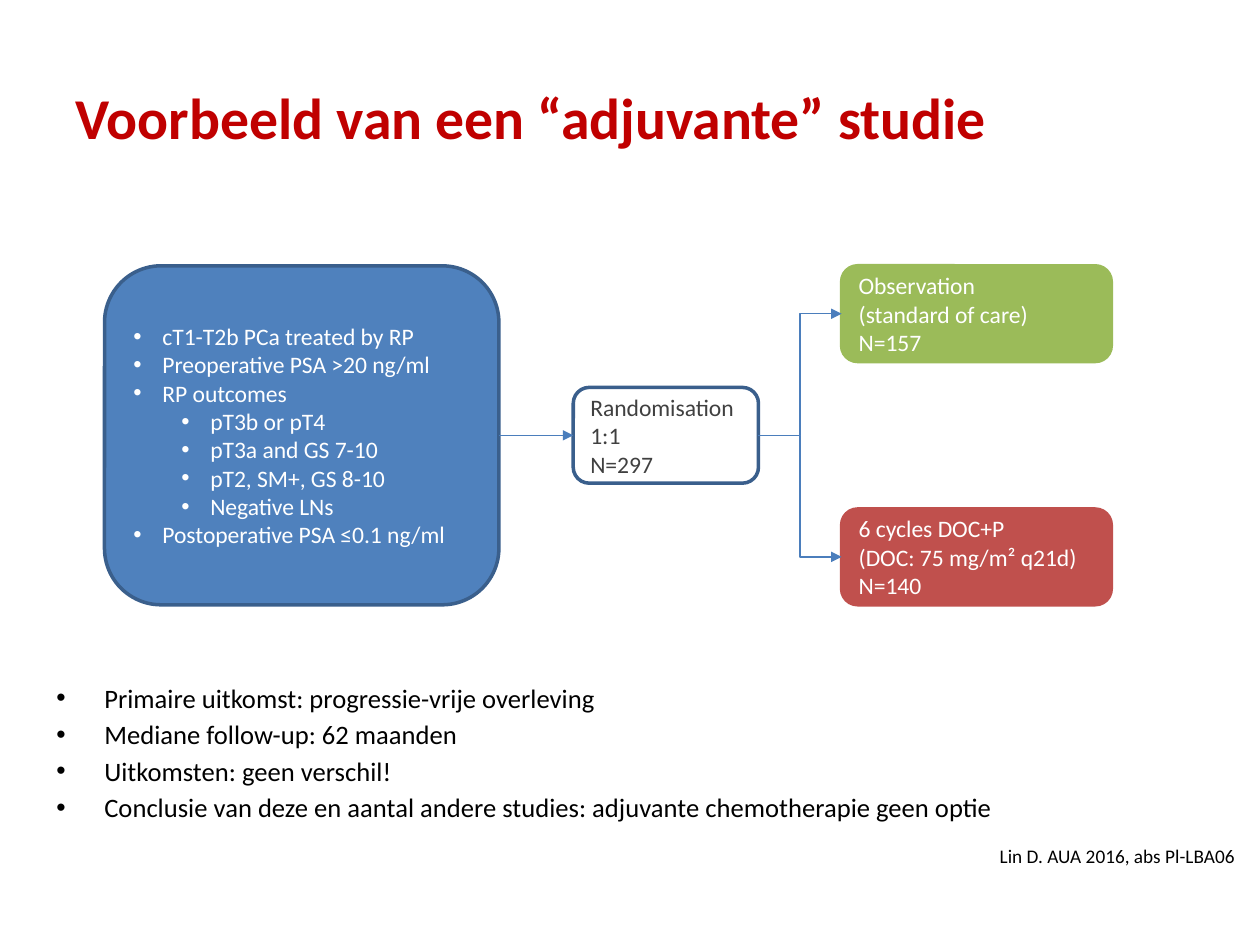
import pptx
import pptx.dml.color
import pptx.enum.dml
import pptx.enum.shapes
import pptx.enum.text
import pptx.oxml.ns
import pptx.util
from lxml import etree
from pptx.dml.color import RGBColor
from pptx.util import Inches

FONT = "Calibri"
TITLE_RED = RGBColor(0xC0, 0x00, 0x00)
BLACK = RGBColor(0x00, 0x00, 0x00)
WHITE = RGBColor(0xFF, 0xFF, 0xFF)
DARK_GREY = RGBColor(0x40, 0x40, 0x40)
BLUE = RGBColor(0x4F, 0x81, 0xBD)
BORDER_BLUE = RGBColor(0x3A, 0x5F, 0x8C)
ARROW_BLUE = RGBColor(0x4B, 0x7E, 0xBC)
GREEN = RGBColor(0x9B, 0xBB, 0x59)
RED = RGBColor(0xC0, 0x50, 0x4D)

CRITERIA = [
    ("cT1-T2b PCa treated by RP", 0),
    ("Preoperative PSA >20 ng/ml", 0),
    ("RP outcomes", 0),
    ("pT3b or pT4", 1),
    ("pT3a and GS 7-10", 1),
    ("pT2, SM+, GS 8-10", 1),
    ("Negative LNs", 1),
    ("Postoperative PSA ≤0.1 ng/ml", 0),
]
RANDOMISATION = ["Randomisation", "1:1", "N=297"]
OBSERVATION = ["Observation", "(standard of care)", "N=157"]
CHEMOTHERAPY = ["6 cycles DOC+P", "(DOC: 75 mg/m² q21d)", "N=140"]
FINDINGS = [
    "Primaire uitkomst: progressie-vrije overleving",
    "Mediane follow-up: 62 maanden",
    "Uitkomsten: geen verschil!",
    "Conclusie van deze en aantal andere studies: adjuvante chemotherapie geen optie",
]


def add_bullet(paragraph, left, hanging):
    properties = paragraph._p.get_or_add_pPr()
    properties.set("marL", str(left))
    properties.set("indent", str(-hanging))
    for tag, name, value in (("a:buFont", "typeface", "Arial"), ("a:buChar", "char", "•")):
        etree.SubElement(properties, pptx.oxml.ns.qn(tag)).set(name, value)


def write_lines(frame, lines, size, color, bold=False,
                align=pptx.enum.text.PP_ALIGN.LEFT):
    frame.word_wrap = True
    frame.text = "\n".join(lines)
    for paragraph in frame.paragraphs:
        paragraph.alignment = align
        for run in paragraph.runs:
            run.font.name = FONT
            run.font.size = pptx.util.Pt(size)
            run.font.bold = bold
            run.font.color.rgb = color


def add_text(slide, box, lines, size, color, **style):
    frame = slide.shapes.add_textbox(*box).text_frame
    write_lines(frame, lines, size, color, **style)
    return frame


def add_step(slide, box, lines, fill, border, color):
    step = slide.shapes.add_shape(
        pptx.enum.shapes.MSO_SHAPE.ROUNDED_RECTANGLE, *box)
    step.shadow.inherit = False
    if fill is None:
        step.fill.background()
    else:
        step.fill.solid()
        step.fill.fore_color.rgb = fill
    step.line.color.rgb = border
    step.line.width = pptx.util.Pt(2)
    step.text_frame.vertical_anchor = pptx.enum.text.MSO_ANCHOR.MIDDLE
    write_lines(step.text_frame, lines, 13.5, color)
    return step


def add_arrow(slide, source, target, kind):
    arrow = slide.shapes.add_connector(kind, 0, 0, 0, 0)
    arrow.begin_connect(source, 3)
    arrow.end_connect(target, 1)
    arrow.line.color.rgb = ARROW_BLUE
    arrow.line.width = pptx.util.Pt(0.75)
    line = arrow.line._get_or_add_ln()
    etree.SubElement(line, pptx.oxml.ns.qn("a:tailEnd")).set("type", "triangle")
    etree.SubElement(arrow._element.spPr, pptx.oxml.ns.qn("a:effectLst"))


def build_title(slide, box):
    frame = add_text(slide, box, ["Voorbeeld van een “adjuvante” studie"],
                     33, TITLE_RED, bold=True)
    frame.vertical_anchor = pptx.enum.text.MSO_ANCHOR.MIDDLE


def build_trial_flow(slide, box):
    left, top, width, height = box
    step_height = Inches(0.76)
    arm_width = Inches(2.14)
    arm_left = left + width - arm_width

    # Inclusion criteria
    criteria = add_step(slide, (left, top, Inches(3.13), height),
                        [text for text, level in CRITERIA], BLUE, BORDER_BLUE, WHITE)
    for paragraph, (text, level) in zip(criteria.text_frame.paragraphs, CRITERIA):
        paragraph.level = level
        add_bullet(paragraph, Inches(0.23 + 0.38 * level), Inches(0.23))

    # Randomisation, centred vertically
    randomisation = add_step(
        slide,
        (left + Inches(3.72), top + (height - step_height) // 2, Inches(1.47), step_height),
        RANDOMISATION, None, BORDER_BLUE, DARK_GREY)

    # Study arms, at the top and bottom of the flow
    observation = add_step(slide, (arm_left, top, arm_width, step_height),
                           OBSERVATION, GREEN, GREEN, WHITE)
    chemotherapy = add_step(
        slide, (arm_left, top + height - step_height, arm_width, step_height),
        CHEMOTHERAPY, RED, RED, WHITE)

    # Arrows
    connector = pptx.enum.shapes.MSO_CONNECTOR
    add_arrow(slide, criteria, randomisation, connector.STRAIGHT)
    for arm in (observation, chemotherapy):
        add_arrow(slide, randomisation, arm, connector.ELBOW)


def build_findings(slide, box):
    frame = add_text(slide, box, FINDINGS, 15.2, BLACK)
    for index, paragraph in enumerate(frame.paragraphs):
        if index:
            paragraph.space_before = pptx.util.Pt(2.6)
        add_bullet(paragraph, Inches(0.38), Inches(0.38))


def build_citation(slide, box):
    add_text(slide, box, ["Lin D. AUA 2016, abs Pl-LBA06"], 11, BLACK,
             align=pptx.enum.text.PP_ALIGN.RIGHT)


def main():
    deck = pptx.Presentation()
    deck.slide_width = Inches(10)
    deck.slide_height = Inches(7.5)
    slide = deck.slides.add_slide(deck.slide_layouts[6])
    build_title(slide, (Inches(0.5), Inches(0.3), Inches(9), Inches(1.25)))
    build_trial_flow(slide, (Inches(0.83), Inches(2.11), Inches(7.99), Inches(2.69)))
    build_findings(slide, (Inches(0.35), Inches(5.36), Inches(9.3), Inches(1.16)))
    build_citation(slide, (Inches(5.37), Inches(6.65), Inches(4.53), Inches(0.26)))
    deck.save("out.pptx")


if __name__ == "__main__":
    main()
